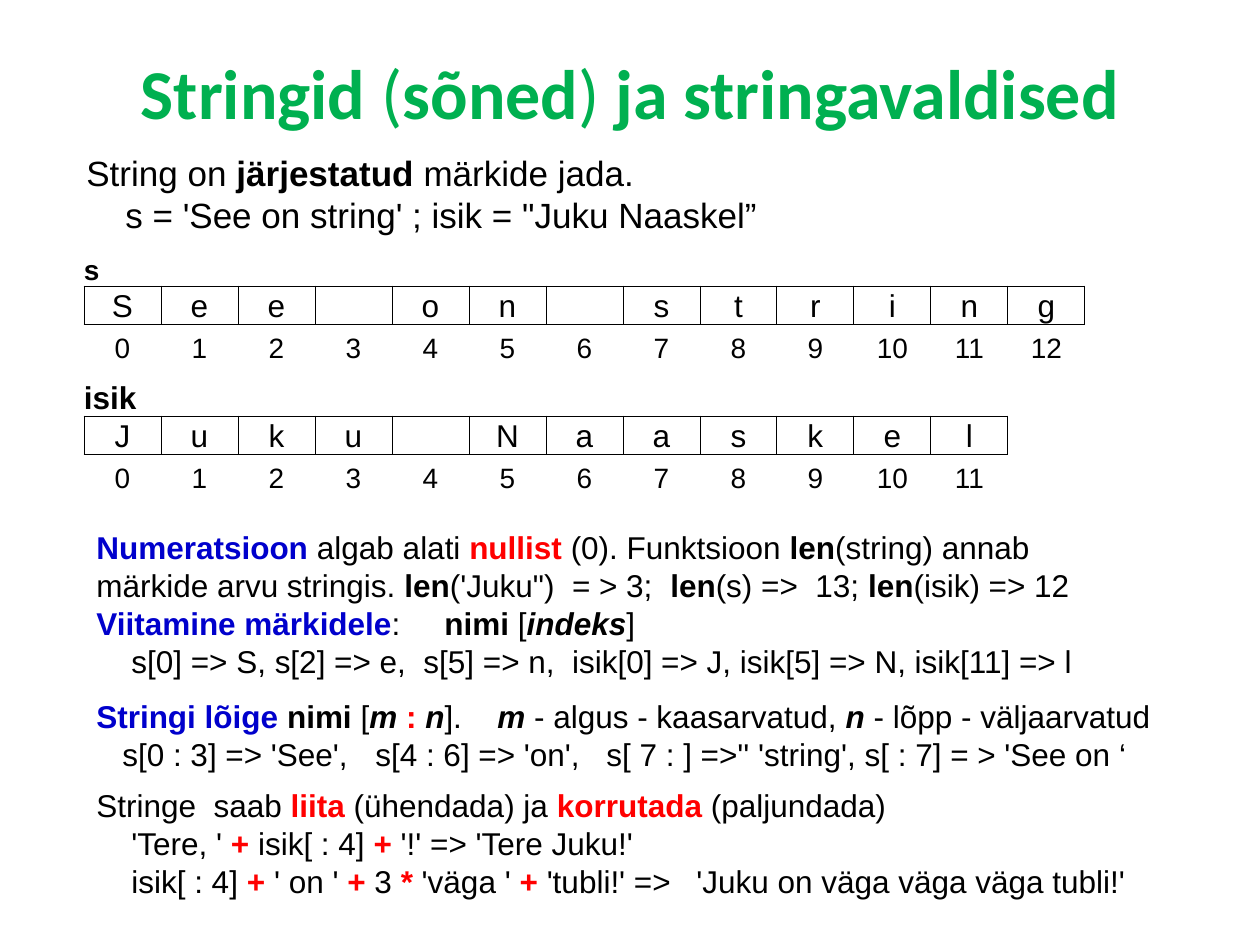
"""Build the slide on strings and string expressions."""
from lxml import etree
from pptx import Presentation
from pptx.dml.color import RGBColor
from pptx.enum.text import MSO_ANCHOR, MSO_AUTO_SIZE, PP_ALIGN
from pptx.oxml.ns import qn
from pptx.util import Inches, Pt

PX = 7257
CENTER, LEFT = PP_ALIGN.CENTER, PP_ALIGN.LEFT
MIDDLE, BOTTOM = MSO_ANCHOR.MIDDLE, MSO_ANCHOR.BOTTOM
GROW = MSO_AUTO_SIZE.SHAPE_TO_FIT_TEXT
BLACK, GREEN, BLUE, RED = "000000", "00B050", "0000CC", "FF0000"
NO_STYLE = "{2D5ABB26-0587-4C30-8999-92F81FD0307C}"
STYLES = {
    "plain": (BLACK, False, False),
    "bold": (BLACK, True, False),
    "term": (BLACK, True, True),
    "blue": (BLUE, True, False),
    "red": (RED, True, False),
    "title": (GREEN, True, False),
    "bracket": (GREEN, False, False),
}


def style_font(font, color, bold, italic):
    font.color.rgb = RGBColor.from_string(color)
    font.bold = bold
    font.italic = italic


def add_text(bounds, face, size, lines):
    box = slide.shapes.add_textbox(*(value * PX for value in bounds))
    frame = box.text_frame
    frame.word_wrap = True
    for number, (stops, runs) in enumerate(lines):
        paragraph = frame.add_paragraph() if number else frame.paragraphs[0]
        if stops:
            tabs = etree.SubElement(paragraph._p.get_or_add_pPr(), qn("a:tabLst"))
            for stop in stops:
                etree.SubElement(tabs, qn("a:tab"), pos=str(stop * PX), algn="l")
        paragraph.font.name = face
        paragraph.font.size = Pt(size)
        for words, style in runs:
            run = paragraph.add_run()
            run.text = words
            style_font(run.font, *STYLES[style])
    return frame


prs = Presentation()
prs.slide_width, prs.slide_height = Inches(10), Inches(7.5)
slide = prs.slides.add_slide(prs.slide_layouts[6])

title = add_text((63, 38, 1134, 107), "Calibri", 40, [
    ((), [("Stringid ", "title"), ("(", "bracket"), ("sõned", "title"),
          (")", "bracket"), (" ja stringavaldised", "title")]),
])
title.vertical_anchor = MIDDLE
title.paragraphs[0].alignment = CENTER

definition = add_text((74, 145, 1111, 97), "Arial", 20, [
    ((), [("String on ", "plain"), ("järjestatud", "bold"), (" märkide jada.", "plain")]),
    ((39,), [("\ts = 'See on string' ; isik = \"Juku Naaskel”", "plain")]),
])

row_heights = (52, 38, 40) * 2
column_count, column_width = 13, 77
table_frame = slide.shapes.add_table(
    len(row_heights), column_count, 84 * PX, 234 * PX,
    column_count * column_width * PX, sum(row_heights) * PX)
next(table_frame.element.iter(qn("a:tableStyleId"))).text = NO_STYLE
table = table_frame.table
table.first_row = table.horz_banding = False
for column in table.columns:
    column.width = column_width * PX
for row, height in zip(table.rows, row_heights):
    row.height = height * PX

variables = (("s", 16, "See on string"), ("isik", 18, "Juku Naaskel"))
for order, (variable, name_size, letters) in enumerate(variables):
    indexes = [str(index) for index in range(len(letters))]
    rows = (([variable], name_size, True, LEFT),
            (letters, 18, False, CENTER),
            (indexes, 16, False, CENTER))
    for offset, (values, size, bold, alignment) in enumerate(rows):
        for position in range(column_count):
            cell = table.cell(order * 3 + offset, position)
            cell.margin_left = cell.margin_right = 0
            cell.margin_top = cell.margin_bottom = 0
            cell.vertical_anchor = BOTTOM
            cell.fill.background()
            if position >= len(values):
                continue
            cell.text = values[position].strip()
            paragraph = cell.text_frame.paragraphs[0]
            paragraph.alignment = alignment
            paragraph.font.name = "Arial"
            paragraph.font.size = Pt(size)
            style_font(paragraph.font, BLACK, bold, False)
            if values is letters:
                properties = cell._tc.get_or_add_tcPr()
                for place, side in enumerate(("a:lnL", "a:lnR", "a:lnT", "a:lnB")):
                    border = etree.Element(qn(side), w=str(Pt(0.5)))
                    fill = etree.SubElement(border, qn("a:solidFill"))
                    etree.SubElement(fill, qn("a:srgbClr"), val=BLACK)
                    properties.insert(place, border)
table.cell(3, 0).merge(table.cell(3, 1))

indexing = add_text((84, 522, 1042, 165), "Arial", 18, [
    ((), [("Numeratsioon ", "blue"), ("algab alati ", "plain"), ("nullist", "red"),
          (" (0). Funktsioon ", "plain"), ("len", "bold"),
          ("(string) annab märkide arvu stringis. ", "plain"), ("len", "bold"),
          ("('Juku\")  = > 3;  ", "plain"), ("len", "bold"), ("(s) =>  13; ", "plain"),
          ("len", "bold"), ("(isik) => 12", "plain")]),
    ((348,), [("Viitamine märkidele", "blue"), (":\t", "plain"), ("nimi", "bold"),
              (" [", "plain"), ("indeks", "term"), ("]", "plain")]),
    ((35,), [("\ts[0] => S, s[2] => e,  s[5] => n,  isik[0] => J, "
              "isik[5] => N, isik[11] => l", "plain")]),
])

slicing = add_text((84, 691, 1101, 89), "Arial", 18, [
    ((401,), [("Stringi lõige ", "blue"), ("nimi", "bold"), (" [", "plain"), ("m ", "term"),
              (":", "red"), (" n", "term"), ("].\t", "plain"), ("m", "term"),
              (" - algus - kaasarvatud, ", "plain"), ("n", "term"),
              (" - lõpp - väljaarvatud", "plain")]),
    ((26, 279, 510), [("\ts[0 : 3] => 'See',\ts[4 : 6] => 'on',\t"
                       "s[ 7 : ] =>'' 'string', s[ : 7] = > 'See on ‘", "plain")]),
])

joining = add_text((84, 780, 1101, 127), "Arial", 18, [
    ((), [("Stringe  saab ", "plain"), ("liita", "red"), (" (ühendada) ja ", "plain"),
          ("korrutada", "red"), (" (paljundada)", "plain")]),
    ((35,), [("\t'Tere, ' ", "plain"), ("+ ", "red"), ("isik[ : 4] ", "plain"),
             ("+", "red"), (" '!' => 'Tere Juku!'", "plain")]),
    ((35, 600), [("\tisik[ : 4] ", "plain"), ("+", "red"), (" ' on ' ", "plain"),
                 ("+", "red"), (" 3 ", "plain"), ("*", "red"), (" 'väga ' ", "plain"),
                 ("+", "red"), (" 'tubli!' =>\t'Juku on väga väga väga tubli!'", "plain")]),
])
for body in (definition, indexing, slicing, joining):
    body.auto_size = GROW

prs.save("out.pptx")
